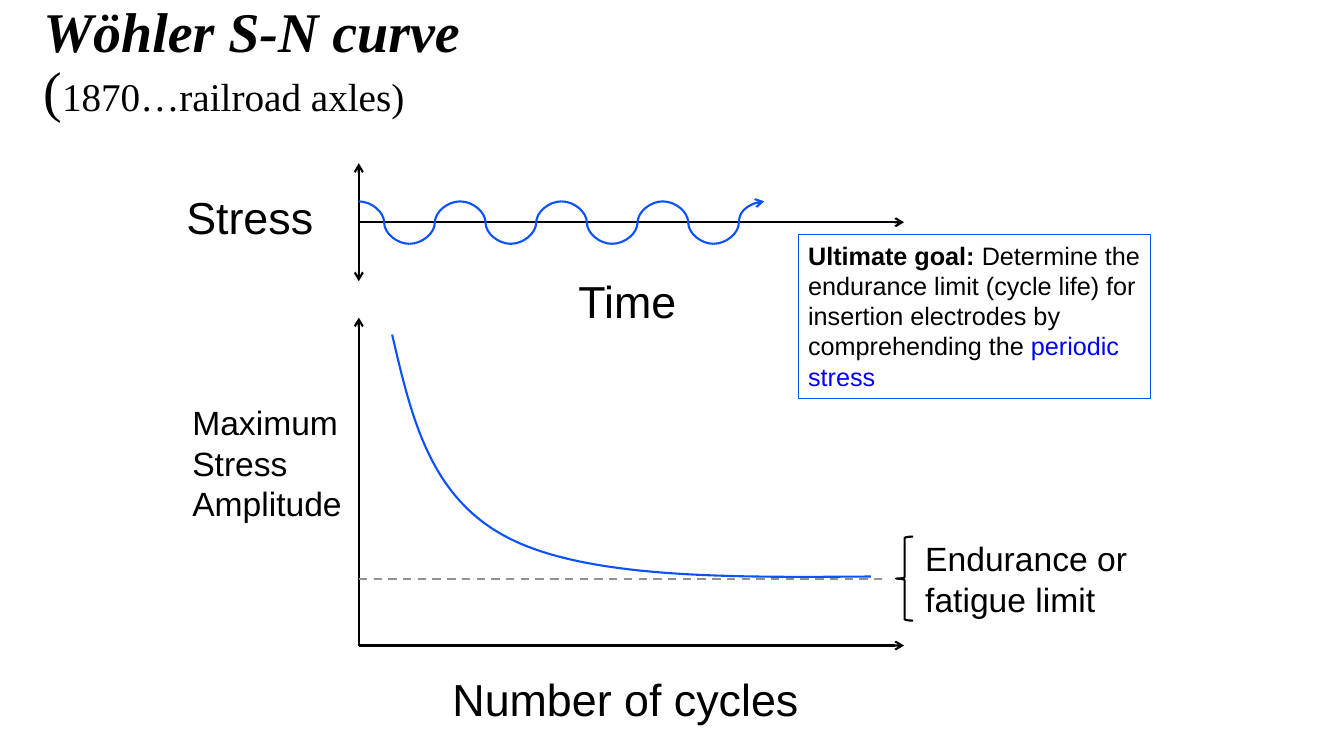
from dataclasses import dataclass

from lxml import etree
from pptx import Presentation
from pptx.dml.color import RGBColor
from pptx.enum.dml import MSO_LINE
from pptx.enum.shapes import MSO_CONNECTOR as CONN, MSO_SHAPE as SHAPE
from pptx.enum.text import MSO_ANCHOR, MSO_AUTO_SIZE, PP_ALIGN
from pptx.oxml.ns import qn
from pptx.util import Pt


@dataclass(frozen=True)
class Theme:
    ink: str = "000000"
    curve: str = "0B52FC"
    accent: str = "0000FF"
    limit: str = "919191"
    serif: str = "Times New Roman"
    sans: str = "Arial"
    title: int = 40
    axis: int = 32
    subtitle: int = 28
    label: int = 24
    note: int = 18
    stroke: float = 1.5
    hairline: float = 0.75


T = Theme()


def add_run(p, text, size, color=T.ink, font=T.sans, bold=False, italic=False):
    r = p.add_run()
    r.text = text
    f = r.font
    f.name, f.size, f.bold, f.italic = font, Pt(size), bold, italic
    f.color.rgb = RGBColor.from_string(color)


def style_line(line, color=T.ink, width=T.stroke):
    line.color.rgb = RGBColor.from_string(color)
    line.width = Pt(width)


def add_line(s, x1, y1, x2, y2, color=T.ink, kind=CONN.STRAIGHT, ends=()):
    c = s.shapes.add_connector(kind, Pt(x1), Pt(y1), Pt(x2), Pt(y2))
    style_line(c.line, color)
    ln = c.line._get_or_add_ln()
    for end in ends:
        etree.SubElement(ln, qn(f"a:{end}"), type="arrow")
    etree.SubElement(c._element.spPr, qn("a:effectLst"))
    return c


def add_label(s, x, y, w, h, lines, size, wrap=False):
    tf = s.shapes.add_textbox(Pt(x), Pt(y), Pt(w), Pt(h)).text_frame
    tf.word_wrap = wrap
    for i, text in enumerate(lines):
        p = tf.add_paragraph() if i else tf.paragraphs[0]
        add_run(p, text, size)


def outline(sp, color=T.ink, width=T.stroke):
    sp.shadow.inherit = False
    sp.fill.background()
    style_line(sp.line, color, width)


def bezier(p0, p1, p2, p3, steps=40):
    """Points along a cubic curve, without its start."""
    for i in range(1, steps + 1):
        t = i / steps
        u = 1 - t
        yield tuple(u**3 * a + 3 * u * u * t * b + 3 * u * t * t * c + t**3 * d
                    for a, b, c, d in zip(p0, p1, p2, p3))


def title_block(s, x, y, w, h):
    sp = s.shapes.title
    sp.left, sp.top, sp.width, sp.height = Pt(x), Pt(y), Pt(w), Pt(h)
    tf = sp.text_frame
    tf.word_wrap = True
    tf.auto_size = MSO_AUTO_SIZE.NONE
    tf.vertical_anchor = MSO_ANCHOR.MIDDLE
    p = tf.paragraphs[0]
    p.alignment = PP_ALIGN.LEFT
    p.line_spacing = 0.88
    add_run(p, "Wöhler S-N curve ", T.title, font=T.serif, bold=True, italic=True)
    p.add_line_break()
    add_run(p, "(", T.title, font=T.serif)
    add_run(p, "1870…railroad axles)", T.subtitle, font=T.serif)


def stress_time_panel(s, x, y, w, h):
    mid = y + h / 2
    add_line(s, x, y + h, x, y, ends=("headEnd", "tailEnd"))
    add_line(s, x, mid, x + w, mid, ends=("tailEnd",))
    add_label(s, x - 130.3, y + 15.2, 105.8, 46, ["Stress"], T.axis)
    add_label(s, x + 149.8, y + 75.6, 85, 46, ["Time"], T.axis)

    # Periodic stress: half waves that fall and rise in turn
    crest, trough, step, count = mid - 14.9, mid + 15.4, 36.2, 8
    for i in range(count):
        start, end = (trough, crest) if i % 2 else (crest, trough)
        add_line(s, x + i * step, start, x + (i + 1) * step, end, T.curve,
                 CONN.CURVE, ("tailEnd",) if i == count - 1 else ())


def sn_panel(s, x, y, w, h):
    # Axes
    add_line(s, x, y + h, x, y, ends=("tailEnd",))
    add_line(s, x, y + h, x + w, y + h, ends=("tailEnd",))
    add_label(s, x - 126, y + 56.9, 122.4, 94.3,
              ["Maximum", "Stress", "Amplitude"], T.label)
    add_label(s, x + 59.8, y + h + 15.1, 263.5, 46, ["Number of cycles"], T.axis)

    # Endurance limit
    limit = y + 186.5
    c = add_line(s, x, limit, x + 378, limit, T.limit)
    c.line.dash_style = MSO_LINE.DASH
    brace = s.shapes.add_shape(SHAPE.LEFT_BRACE, Pt(x + 383.8), Pt(limit - 30),
                               Pt(12.2), Pt(60))
    outline(brace)
    add_label(s, x + 397.5, limit - 32.4, 185.8, 65.5,
              ["Endurance or fatigue limit"], T.label, wrap=True)

    # S-N curve: two cubic pieces
    knots = [(x + dx, y + dy) for dx, dy in (
        (23.8, 12.2), (37.5, 70.6), (50.4, 128.9), (107.3, 157.7),
        (164.2, 186.5), (265, 185.8), (365.8, 185))]
    points = [*bezier(*knots[:4]), *bezier(*knots[3:])]
    fb = s.shapes.build_freeform(Pt(knots[0][0]), Pt(knots[0][1]))
    fb.add_line_segments([(Pt(px), Pt(py)) for px, py in points], close=False)
    outline(fb.convert_to_shape(), T.curve)


def goal_box(s, x, y, w, h):
    sp = s.shapes.add_shape(SHAPE.RECTANGLE, Pt(x), Pt(y), Pt(w), Pt(h))
    outline(sp, T.curve, T.hairline)
    tf = sp.text_frame
    tf.word_wrap = True
    tf.vertical_anchor = MSO_ANCHOR.TOP
    p = tf.paragraphs[0]
    p.alignment = PP_ALIGN.LEFT
    add_run(p, "Ultimate goal: ", T.note, bold=True)
    add_run(p, "Determine the endurance limit (cycle life) for insertion "
               "electrodes by comprehending the ", T.note)
    add_run(p, "periodic stress", T.note, T.accent)


def main():
    prs = Presentation()
    prs.slide_width, prs.slide_height = Pt(960), Pt(540)
    s = prs.slides.add_slide(prs.slide_layouts[5])
    title_block(s, 23.8, 18, 866.2, 55.4)
    stress_time_panel(s, 256.3, 116.6, 389.5, 84.3)
    sn_panel(s, 256.3, 226.8, 389.5, 234.3)
    goal_box(s, 570.2, 167.8, 252, 116.6)
    prs.save("out.pptx")


if __name__ == "__main__":
    main()
